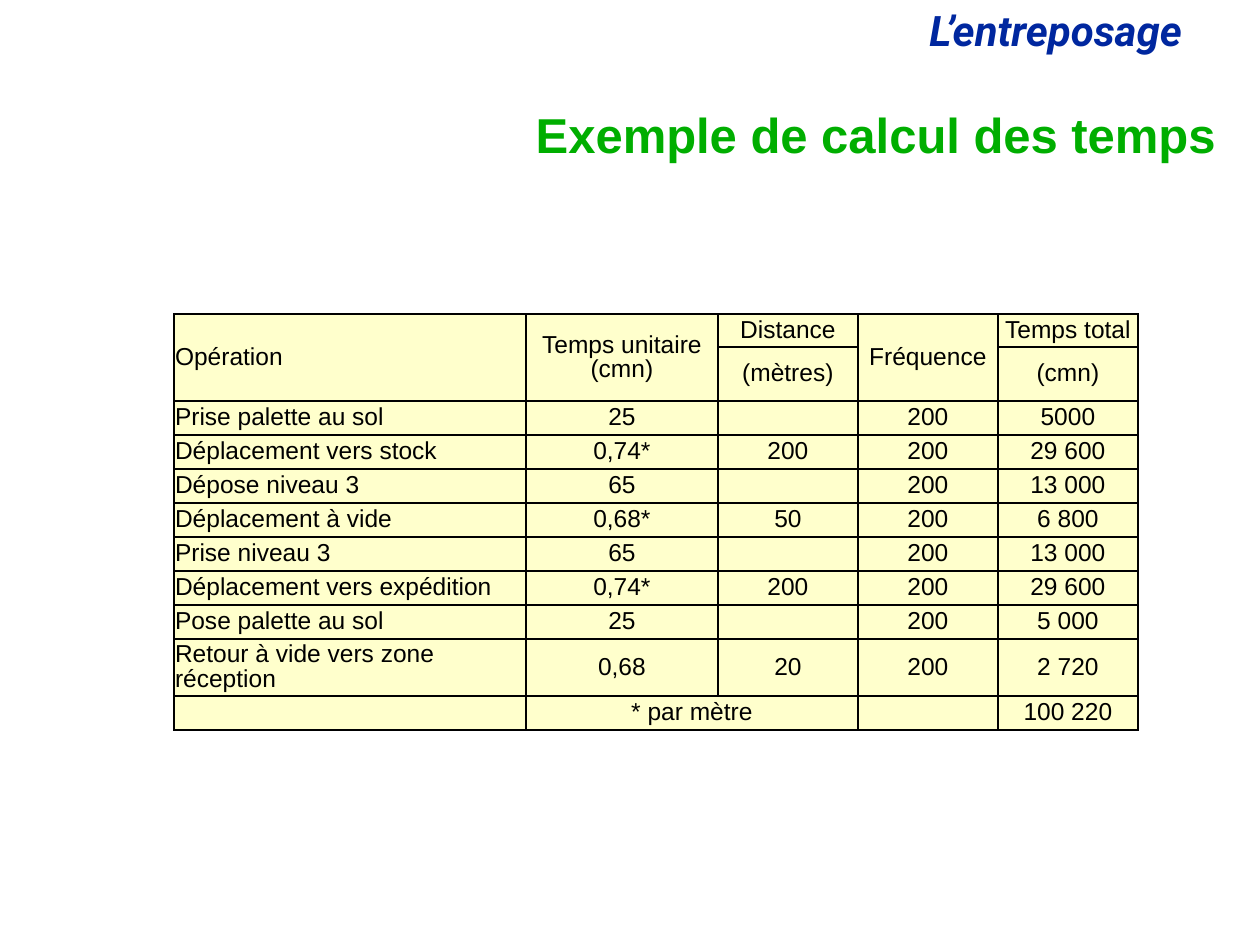
import pptx
import pptx.util
import pptx.dml.color
import pptx.enum.text
import pptx.oxml
import pptx.oxml.ns

PX = 914400 // 126
COLORS = {"head": "00279F", "title": "00AE00", "text": "000000",
          "cell": "FFFFCC", "line": "000000"}
ALIGN = pptx.enum.text.PP_ALIGN
MIDDLE = pptx.enum.text.MSO_ANCHOR.MIDDLE

COLS = [352, 192, 140, 140, 140]
HEIGHTS = [33] + [34] * 8 + [57, 34]
ROWS = [
    ["Opération", "Temps unitaire (cmn)", "Distance", "Fréquence", "Temps total"],
    ["", "", "(mètres)", "", "(cmn)"],
    ["Prise palette au sol", "25", "", "200", "5000"],
    ["Déplacement vers stock", "0,74*", "200", "200", "29 600"],
    ["Dépose niveau 3", "65", "", "200", "13 000"],
    ["Déplacement à vide", "0,68*", "50", "200", "6 800"],
    ["Prise niveau 3", "65", "", "200", "13 000"],
    ["Déplacement vers expédition", "0,74*", "200", "200", "29 600"],
    ["Pose palette au sol", "25", "", "200", "5 000"],
    ["Retour à vide vers zone réception", "0,68", "20", "200", "2 720"],
    ["", "* par mètre", "", "", "100 220"],
]
SPANS = [((0, 0), (1, 0)), ((0, 1), (1, 1)), ((0, 3), (1, 3)),
         ((10, 1), (10, 2))]


def color(name):
    return pptx.dml.color.RGBColor.from_string(COLORS[name])


class Deck:
    def __init__(self, width, height):
        self.prs = pptx.Presentation()
        self.prs.slide_width = width * PX
        self.prs.slide_height = height * PX
        self.slide = self.prs.slides.add_slide(self.prs.slide_layouts[6])

    def style(self, para, size, tint, align, face="Arial", bold=False, italic=False):
        para.alignment = align
        para.line_spacing = 0.9
        font = para.font
        font.name, font.size = face, pptx.util.Pt(size)
        font.bold, font.italic = bold, italic
        font.color.rgb = color(tint)

    def text(self, box, words, size, tint, align, anchor=None, **look):
        shape = self.slide.shapes.add_textbox(*(n * PX for n in box))
        frame = shape.text_frame
        frame.word_wrap = True
        frame.vertical_anchor = anchor
        frame.text = words
        self.style(frame.paragraphs[0], size, tint, align, **look)

    def border(self, cell):
        """Draw a 1 pt line on all four sides of the cell."""
        props = cell._tc.get_or_add_tcPr()
        for spot, side in enumerate("LRTB"):
            props.insert(spot, pptx.oxml.parse_xml(
                f'<a:ln{side} {pptx.oxml.ns.nsdecls("a")} w="12700"><a:solidFill>'
                f'<a:srgbClr val="{COLORS["line"]}"/></a:solidFill></a:ln{side}>'))

    def cell(self, cell, words, align):
        cell.text = words
        cell.vertical_anchor = MIDDLE
        cell.margin_left = cell.margin_right = cell.margin_top = PX
        cell.margin_bottom = 0
        cell.fill.solid()
        cell.fill.fore_color.rgb = color("cell")
        self.style(cell.text_frame.paragraphs[0], 14, "text", align)
        self.border(cell)

    def table(self, left, top, cols, heights, rows, spans):
        grid = self.slide.shapes.add_table(
            len(rows), len(cols), left * PX, top * PX,
            sum(cols) * PX, sum(heights) * PX).table
        grid.first_row = grid.horz_banding = False
        for col, width in zip(grid.columns, cols):
            col.width = width * PX
        for r, (row, height) in enumerate(zip(rows, heights)):
            grid.rows[r].height = height * PX
            for c, words in enumerate(row):
                self.cell(grid.cell(r, c), words, ALIGN.CENTER if c else ALIGN.LEFT)
        for start, end in spans:
            grid.cell(*start).merge(grid.cell(*end))


def main():
    deck = Deck(1260, 945)
    deck.text((917, 4, 598, 58), "L’entreposage", 24, "head", ALIGN.LEFT,
              face="Roboto", bold=True, italic=True)
    deck.text((147, 106, 1081, 63), "Exemple de calcul des temps", 28, "title",
              ALIGN.RIGHT, anchor=MIDDLE, bold=True)
    deck.table(174, 314, COLS, HEIGHTS, ROWS, SPANS)
    deck.prs.save("out.pptx")


if __name__ == "__main__":
    main()
